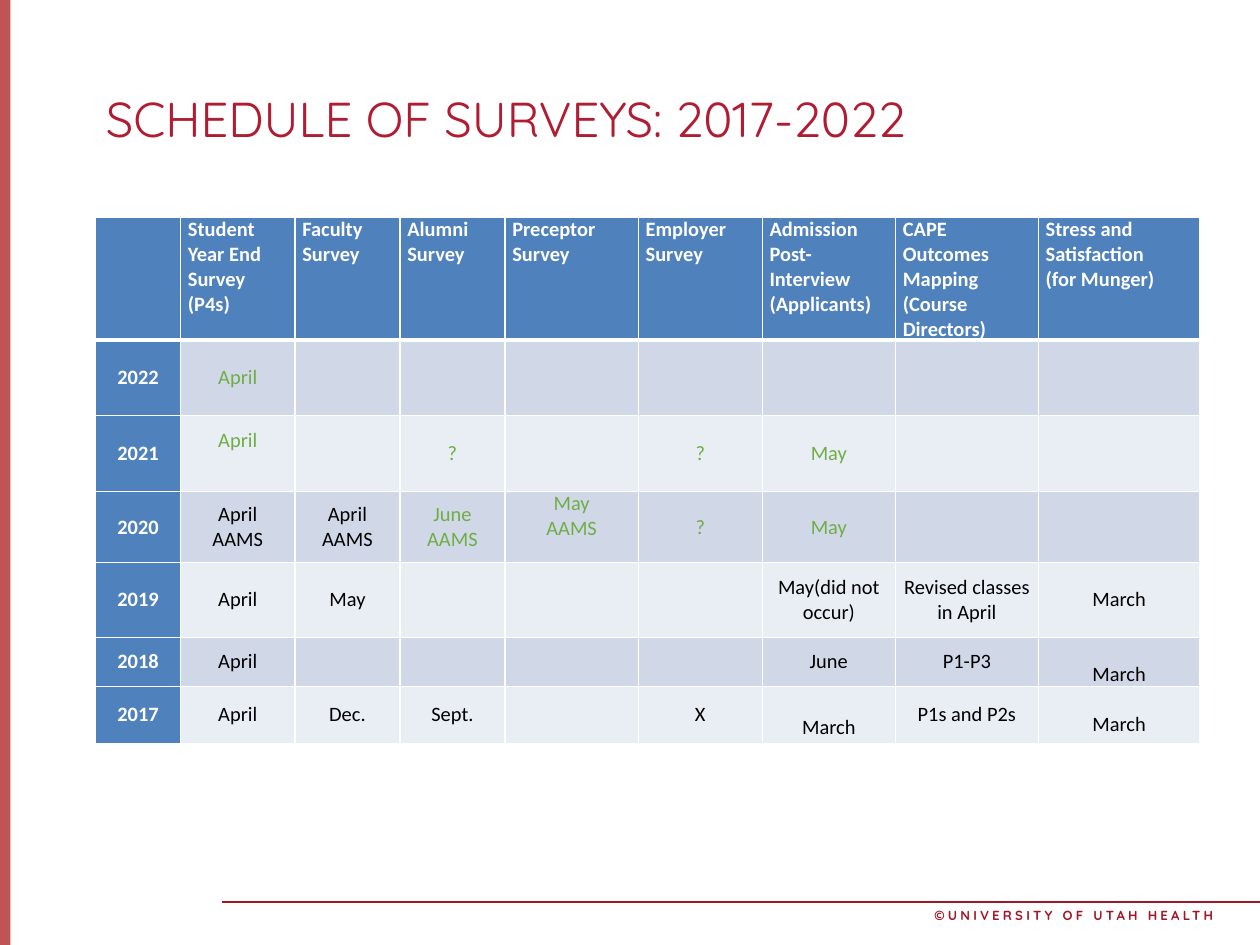
"""Build the survey schedule slide: a title, a year-by-survey table and a footer."""
from lxml.etree import SubElement
from pptx import Presentation
from pptx.dml.color import RGBColor
from pptx.enum.shapes import MSO_CONNECTOR, MSO_SHAPE
from pptx.enum.text import MSO_ANCHOR, PP_ALIGN
from pptx.oxml.ns import qn
from pptx.util import Inches, Pt

COLORS = {"bar": "AF282C", "rule": "A21727", "title": "B01C32", "header": "4F81BD",
          "odd": "D0D8E8", "even": "E9EDF4", "white": "FFFFFF", "black": "000000",
          "planned": "70AD47"}

deck = Presentation()
deck.slide_width, deck.slide_height = Inches(12), Inches(9)
column, row = deck.slide_width // 120, deck.slide_height // 90
page = deck.slides.add_slide(deck.slide_layouts[6])


def style_text(frame, font, size, color, bold=False, align=PP_ALIGN.LEFT):
    frame.word_wrap = True
    for para in frame.paragraphs:
        para.alignment = align
        for span in para.runs:
            span.font.name, span.font.size, span.font.bold = font, Pt(size), bold
            span.font.color.rgb = RGBColor.from_string(COLORS[color])


def add_border(cell, side, width):
    line = SubElement(cell._tc.get_or_add_tcPr(), qn("a:ln" + side), w=str(Pt(width)))
    SubElement(SubElement(line, qn("a:solidFill")), qn("a:srgbClr"), val=COLORS["white"])


bar = page.shapes.add_shape(MSO_SHAPE.RECTANGLE, 0, 0, column, deck.slide_height)
bar.shadow.inherit = False
bar.fill.solid()
bar.fill.fore_color.rgb = RGBColor.from_string(COLORS["bar"])
bar.line.fill.background()
bar_color = bar._element.spPr.find(qn("a:solidFill")).find(qn("a:srgbClr"))
SubElement(bar_color, qn("a:alpha"), val="80000")

rule_top = int(85.9 * row)
rule = page.shapes.add_connector(MSO_CONNECTOR.STRAIGHT, int(21.1 * column), rule_top,
                                 deck.slide_width, rule_top)
rule.line.color.rgb = RGBColor.from_string(COLORS["rule"])
rule.line.width = Pt(1)
SubElement(rule._element.spPr, qn("a:effectLst"))

texts = [
    ("SCHEDULE OF SURVEYS: 2017-2022", (9.1, 7.6, 104.9, 7.2), 33.6, "title", False, PP_ALIGN.LEFT, 0),
    ("©UNIVERSITY OF UTAH HEALTH", (80.8, 85.9, 35.7, 2.5), 9, "rule", True, PP_ALIGN.RIGHT, 2.2),
]
for text, (left, top, width, height), size, color, bold, align, spacing in texts:
    box = page.shapes.add_textbox(int(left * column), int(top * row),
                                  int(width * column), int(height * row))
    box.text_frame.text = text
    box.text_frame.vertical_anchor = MSO_ANCHOR.MIDDLE
    style_text(box.text_frame, "Quicksand", size, color, bold, align)
    span = box.text_frame.paragraphs[0].runs[0]
    span.font._element.set("spc", str(int(spacing * 100)))

schedule = [
    ["", "Student Year End Survey (P4s)", "Faculty Survey", "Alumni Survey", "Preceptor\nSurvey",
     "Employer Survey", "Admission Post-Interview\n(Applicants)",
     "CAPE Outcomes\nMapping\n(Course Directors)", "Stress and Satisfaction\n(for Munger)"],
    ["2022", "April", "", "", "", "", "", "", ""],
    ["2021", "April", "", "?", "", "?", "May", "", ""],
    ["2020", "April\nAAMS", "April\nAAMS", "June\nAAMS", "May\nAAMS", "?", "May", "", ""],
    ["2019", "April", "May", "", "", "", "May(did not occur)", "Revised classes in April", "March"],
    ["2018", "April", "", "", "", "", "June", "P1-P3", "March"],
    ["2017", "April", "Dec.", "Sept.", "", "X", "March", "P1s and P2s", "March"],
]
column_widths = [8.1, 10.9, 10, 10, 12.7, 11.8, 12.7, 13.6, 15.4]
row_heights = [11.7, 7.2, 7.2, 6.8, 7.1, 4.7, 5.4]
text_line = 2.4
placements = {
    (2, 1): (MSO_ANCHOR.MIDDLE, 0, text_line),
    (3, 4): (MSO_ANCHOR.TOP, 0, 0),
    (5, 8): (MSO_ANCHOR.BOTTOM, 0, 0),
    (6, 6): (MSO_ANCHOR.MIDDLE, text_line, 0),
    (6, 8): (MSO_ANCHOR.TOP, text_line, 0),
}

table = page.shapes.add_table(len(schedule), len(column_widths), int(9.1 * column), int(20.7 * row),
                              int(sum(column_widths) * column), int(sum(row_heights) * row)).table
table.first_row = table.horz_banding = False
for c, width in enumerate(column_widths):
    table.columns[c].width = int(width * column)
for r, height in enumerate(row_heights):
    table.rows[r].height = int(height * row)
    for c, text in enumerate(schedule[r]):
        cell = table.cell(r, c)
        is_heading = r == 0 or c == 0
        is_planned = r < 3 or (r == 3 and c > 2)
        for side in "LRTB":
            add_border(cell, side, 3 if (r, side) in ((0, "B"), (1, "T")) else 1)
        cell.fill.solid()
        fill = "header" if is_heading else "odd" if r % 2 else "even"
        cell.fill.fore_color.rgb = RGBColor.from_string(COLORS[fill])
        usual = (MSO_ANCHOR.MIDDLE if r else MSO_ANCHOR.TOP, 0, 0)
        anchor, above, below = placements.get((r, c), usual)
        cell.vertical_anchor = anchor
        cell.margin_left = cell.margin_right = int(0.7 * column)
        cell.margin_top, cell.margin_bottom = int(above * row), int(below * row)
        cell.text_frame.text = text
        color = "white" if is_heading else "planned" if is_planned else "black"
        style_text(cell.text_frame, "Calibri", 14, color, is_heading,
                   PP_ALIGN.CENTER if r else PP_ALIGN.LEFT)

deck.save("out.pptx")
